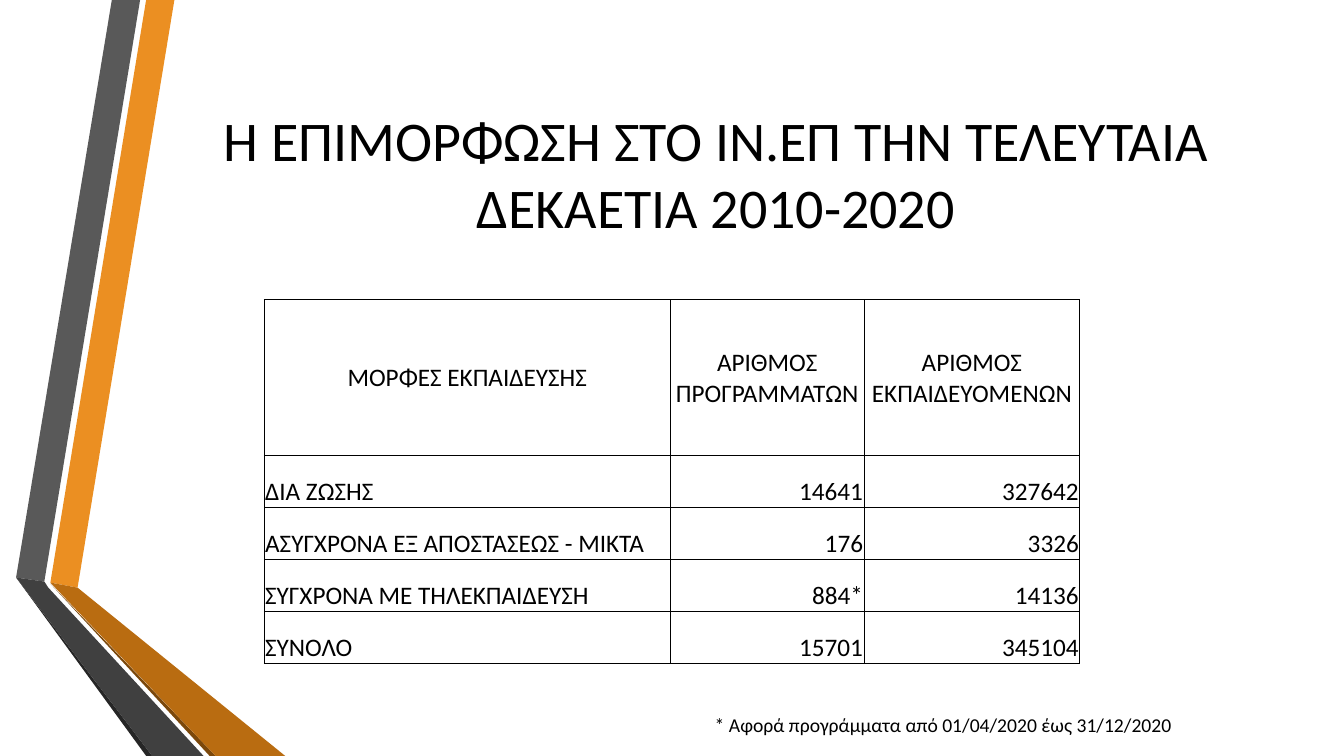
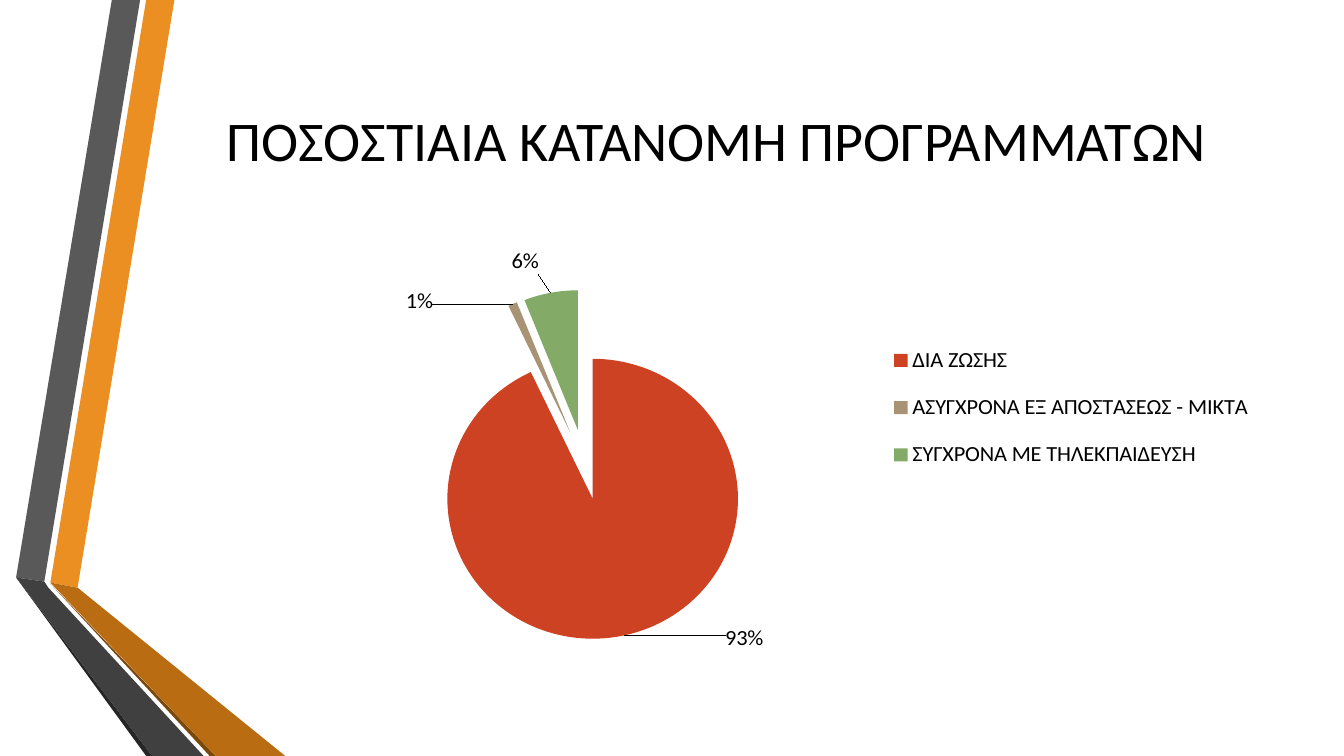
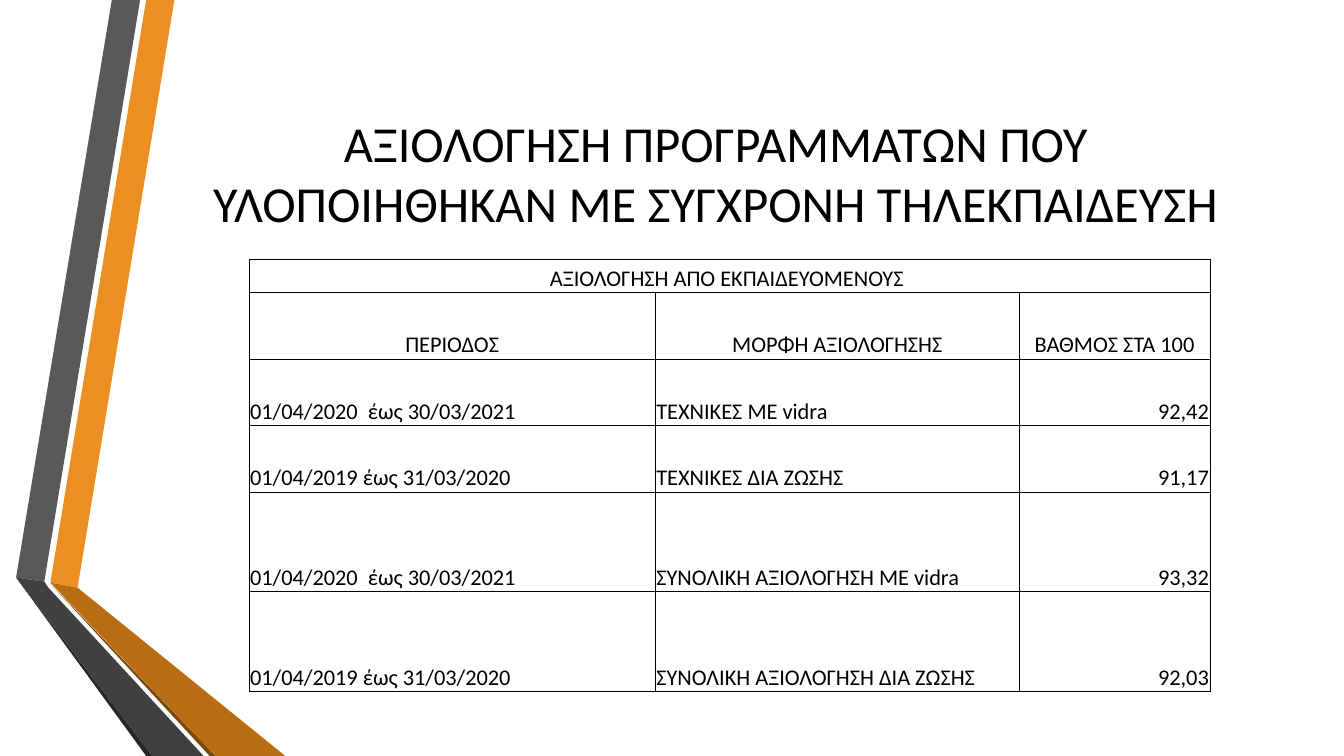
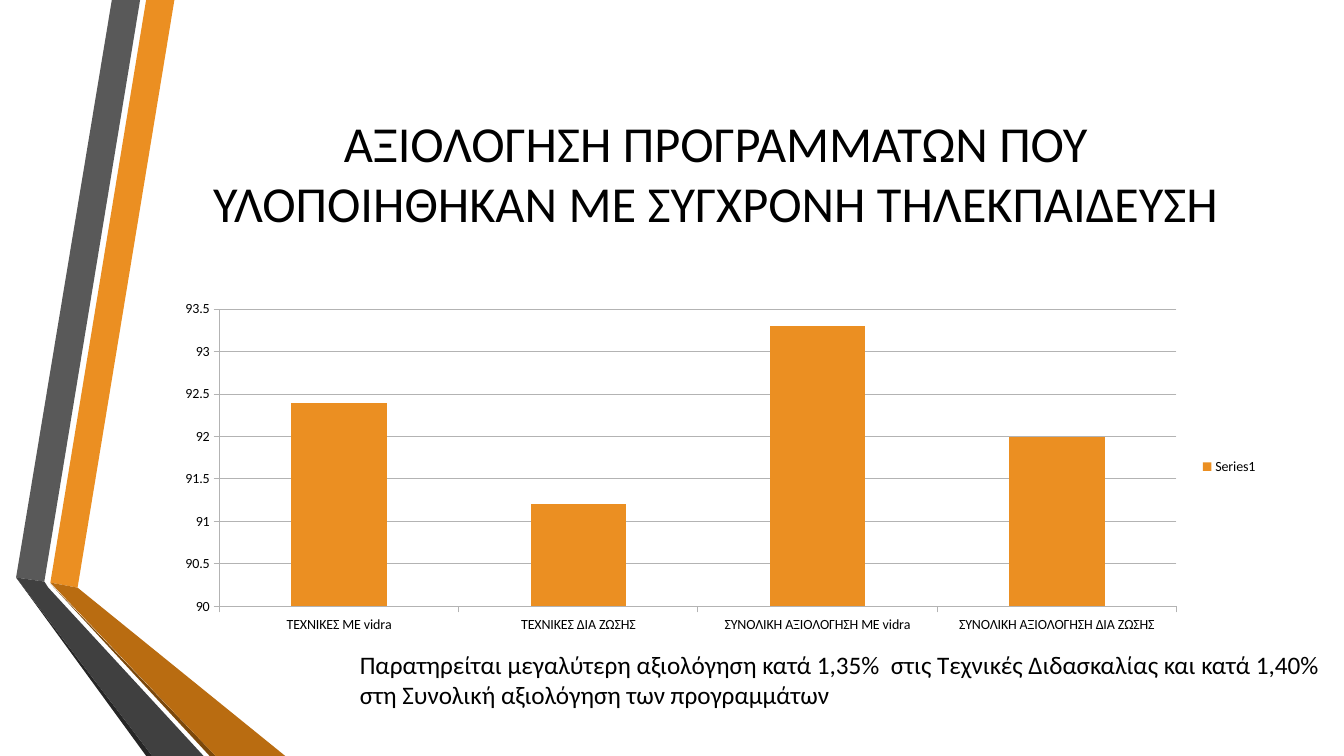
from lxml import etree
from pptx import Presentation
from pptx.chart.data import CategoryChartData
from pptx.dml.color import RGBColor
from pptx.enum.chart import XL_CHART_TYPE, XL_LABEL_POSITION, XL_LEGEND_POSITION, XL_TICK_MARK
from pptx.enum.text import MSO_ANCHOR, MSO_AUTO_SIZE, PP_ALIGN
from pptx.oxml import parse_xml
from pptx.oxml.ns import nsdecls, qn
from pptx.util import Inches, Pt

FONT = "Calibri"
BLACK = RGBColor(0x00, 0x00, 0x00)
ORANGE = RGBColor(0xEB, 0x8F, 0x22)
DARK_ORANGE = RGBColor(0xB9, 0x6C, 0x11)
BROWN = RGBColor(0x7B, 0x48, 0x0B)
GRAY = RGBColor(0x59, 0x59, 0x59)
DARK_GRAY = RGBColor(0x40, 0x40, 0x40)
CHARCOAL = RGBColor(0x26, 0x26, 0x26)
RED = RGBColor(0xCD, 0x42, 0x23)
TAN = RGBColor(0xA8, 0x93, 0x74)
GREEN = RGBColor(0x83, 0xAA, 0x67)
GRID_GRAY = RGBColor(0xB3, 0xB3, 0xB3)

BANDS = [
    (ORANGE, [(0.5, 5.78), (0.77, 5.83), (1.73, 0), (1.45, 0)]),
    (GRAY, [(1.39, 0), (1.11, 0), (0.16, 5.73), (0.44, 5.77)]),
    (CHARCOAL, [(0.16, 5.73), (1.45, 7.5), (1.51, 7.5)]),
    (BROWN, [(0.5, 5.79), (2.08, 7.5), (2.14, 7.5)]),
    (DARK_ORANGE, [(0.5, 5.78), (2.14, 7.5), (2.83, 7.5), (0.77, 5.83)]),
    (DARK_GRAY, [(2.02, 7.5), (0.48, 5.83), (0.44, 5.77), (0.16, 5.73), (1.51, 7.5)]),
]

IN_PERSON = "ΔΙΑ ΖΩΣΗΣ"
MIXED = "ΑΣΥΓΧΡΟΝΑ ΕΞ ΑΠΟΣΤΑΣΕΩΣ - ΜΙΚΤΑ"
REMOTE = "ΣΥΓΧΡΟΝΑ ΜΕ ΤΗΛΕΚΠΑΙΔΕΥΣΗ"
SHARES_TITLE = "ΠΟΣΟΣΤΙΑΙΑ ΚΑΤΑΝΟΜΗ ΠΡΟΓΡΑΜΜΑΤΩΝ"
RATING_TITLE = "ΑΞΙΟΛΟΓΗΣΗ ΠΡΟΓΡΑΜΜΑΤΩΝ ΠΟΥ ΥΛΟΠΟΙΗΘΗΚΑΝ ΜΕ ΣΥΓΧΡΟΝΗ ΤΗΛΕΚΠΑΙΔΕΥΣΗ"
THIS_YEAR = "01/04/2020  έως 30/03/2021"
LAST_YEAR = "01/04/2019 έως 31/03/2020"
RATINGS = [
    (THIS_YEAR, "ΤΕΧΝΙΚΕΣ ΜΕ vidra", "92,42"),
    (LAST_YEAR, "ΤΕΧΝΙΚΕΣ ΔΙΑ ΖΩΣΗΣ", "91,17"),
    (THIS_YEAR, "ΣΥΝΟΛΙΚΗ ΑΞΙΟΛΟΓΗΣΗ ΜΕ vidra", "93,32"),
    (LAST_YEAR, "ΣΥΝΟΛΙΚΗ ΑΞΙΟΛΟΓΗΣΗ ΔΙΑ ΖΩΣΗΣ", "92,03"),
]


def set_font(font, size):
    font.name = FONT
    font.size = Pt(size)
    font.color.rgb = BLACK


def prepare_layout(presentation):
    """Return the title-only layout with its title placed and nothing else on it."""
    layout = presentation.slide_layouts[5]
    for placeholder in list(layout.placeholders):
        if placeholder.placeholder_format.idx:
            layout.shapes.element.remove(placeholder.element)
        else:
            placeholder.left, placeholder.top = Inches(1.62), Inches(0.75)
            placeholder.width, placeholder.height = Inches(10.96), Inches(1.92)
    return layout


def add_bands(slide):
    """Draw the bands and move them to the layout, so that every slide shows them."""
    bands = []
    for color, points in BANDS:
        corners = [(Inches(x), Inches(y)) for x, y in points]
        builder = slide.shapes.build_freeform(*corners[0])
        builder.add_line_segments(corners[1:], close=True)
        band = builder.convert_to_shape()
        band.shadow.inherit = False
        band.fill.solid()
        band.fill.fore_color.rgb = color
        band.line.fill.background()
        bands.append(band)
    for band in bands:
        slide.slide_layout.shapes.element.append(band.element)


def add_slide(presentation, layout, title, size, bottom_margin=0.05):
    slide = presentation.slides.add_slide(layout)
    frame = slide.shapes.title.text_frame
    frame.text = title
    frame.auto_size = MSO_AUTO_SIZE.NONE
    frame.vertical_anchor = MSO_ANCHOR.MIDDLE
    frame.margin_bottom = Inches(bottom_margin)
    frame.paragraphs[0].alignment = PP_ALIGN.CENTER
    set_font(frame.paragraphs[0].font, size)
    return slide


def add_text(slide, text, left, top, width, height, size):
    frame = slide.shapes.add_textbox(
        Inches(left), Inches(top), Inches(width), Inches(height)).text_frame
    frame.word_wrap = True
    frame.text = text
    set_font(frame.paragraphs[0].font, size)


def set_borders(cell):
    properties = cell._tc.get_or_add_tcPr()
    for index, side in enumerate(("lnL", "lnR", "lnT", "lnB")):
        properties.insert(index, parse_xml(
            f'<a:{side} {nsdecls("a")} w="6350"><a:solidFill>'
            f'<a:srgbClr val="{BLACK}"/></a:solidFill></a:{side}>'))


def add_grid(slide, rows, left, top, widths, heights, size,
             header_rows, text_columns, header_anchor):
    """Add a ruled table: centred header, left-aligned text, right-aligned numbers."""
    table = slide.shapes.add_table(
        len(heights), len(widths), Inches(left), Inches(top),
        Inches(sum(widths)), Inches(sum(heights))).table
    table.first_row = table.horz_banding = False
    for column, width in zip(table.columns, widths):
        column.width = Inches(width)
    for row_index, (row, height, texts) in enumerate(zip(table.rows, heights, rows)):
        row.height = Inches(height)
        is_header = row_index < header_rows
        for column_index, (cell, text) in enumerate(zip(row.cells, texts)):
            cell.text = text
            cell.fill.background()
            cell.margin_left = cell.margin_right = cell.margin_top = Inches(0.01)
            cell.margin_bottom = 0
            cell.vertical_anchor = header_anchor if is_header else MSO_ANCHOR.BOTTOM
            paragraph = cell.text_frame.paragraphs[0]
            if is_header:
                paragraph.alignment = PP_ALIGN.CENTER
            elif column_index >= text_columns:
                paragraph.alignment = PP_ALIGN.RIGHT
            else:
                paragraph.alignment = PP_ALIGN.LEFT
            set_font(paragraph.font, size)
            set_borders(cell)
    return table


def add_chart(slide, kind, series_name, categories, values, left, top, width, height,
              number_format="General"):
    data = CategoryChartData(number_format=number_format)
    data.categories = categories
    data.add_series(series_name, values)
    chart = slide.shapes.add_chart(
        kind, Inches(left), Inches(top), Inches(width), Inches(height), data).chart
    set_font(chart.font, 10)
    chart.has_title = False
    chart.has_legend = True
    chart.legend.position = XL_LEGEND_POSITION.RIGHT
    chart.legend.include_in_layout = False
    return chart


def manual_layout(**values):
    """Return a c:layout element with its settings in the given order."""
    layout = etree.Element(qn("c:layout"))
    manual = etree.SubElement(layout, qn("c:manualLayout"))
    for name, value in values.items():
        etree.SubElement(manual, qn(f"c:{name}"), val=str(value))
    return layout


def replace_layout(parent, previous, layout):
    for old in parent.findall(qn("c:layout")):
        parent.remove(old)
    if previous is None:
        parent.insert(0, layout)
    else:
        previous.addnext(layout)


def add_shares_pie(slide):
    chart = add_chart(
        slide, XL_CHART_TYPE.PIE, "Series 1", [SHARES_TITLE, IN_PERSON, MIXED, REMOTE],
        [None, 0.93, 0.01, 0.06], 1.69, 2.43, 10.96, 4.19, "0%")
    plot = chart.plots[0]
    plot.vary_by_categories = True
    series = plot.series[0]
    explosion = etree.Element(qn("c:explosion"), val="25")
    series._element.find(qn("c:tx")).addnext(explosion)
    for index, color in enumerate((ORANGE, RED, TAN, GREEN)):
        fill = series.points[index].format.fill
        fill.solid()
        fill.fore_color.rgb = color

    labels = series.data_labels
    labels.show_value = True
    labels.number_format = "0%"
    labels.number_format_is_linked = False
    set_font(labels.font, 16)
    for index in (1, 2, 3):
        label = series.points[index].data_label
        set_font(label.font, 16)
        label.position = XL_LABEL_POSITION.OUTSIDE_END
    label_offsets = [(0.09, -0.03), (-0.07, 0.04), (-0.01, -0.03)]
    for label, (x, y) in zip(chart.element.iter(qn("c:dLbl")), label_offsets):
        replace_layout(label, label.find(qn("c:idx")), manual_layout(x=x, y=y))
    labels_element = series._element.find(qn("c:dLbls"))
    for old in labels_element.findall(qn("c:showLeaderLines")):
        labels_element.remove(old)
    etree.SubElement(labels_element, qn("c:showLeaderLines"), val="1")

    plot_area = chart.element.find(".//" + qn("c:plotArea"))
    replace_layout(plot_area, None, manual_layout(
        layoutTarget="inner", xMode="edge", yMode="edge", x=0.07, y=0.11, w=0.61, h=0.86))

    set_font(chart.legend.font, 16)
    legend_position = chart.element.find(".//" + qn("c:legendPos"))
    replace_layout(legend_position.getparent(), legend_position, manual_layout(
        xMode="edge", yMode="edge", x=0.65, y=0.2, w=0.33, h=0.4))
    legend_position.addnext(parse_xml(
        f'<c:legendEntry {nsdecls("c")}><c:idx val="0"/><c:delete val="1"/></c:legendEntry>'))


def add_ratings_columns(slide):
    chart = add_chart(
        slide, XL_CHART_TYPE.COLUMN_CLUSTERED, "Series1", [form for _, form, _ in RATINGS],
        [92.4, 91.2, 93.3, 92], 1.62, 2.92, 10.96, 3.42)
    plot = chart.plots[0]
    plot.gap_width = 150
    plot.vary_by_categories = False
    fill = plot.series[0].format.fill
    fill.solid()
    fill.fore_color.rgb = ORANGE
    value_axis = chart.value_axis
    value_axis.minimum_scale, value_axis.maximum_scale = 90, 93.5
    value_axis.major_unit = 0.5
    value_axis.has_major_gridlines = True
    for axis in (value_axis, chart.category_axis):
        axis.major_tick_mark = XL_TICK_MARK.OUTSIDE
        set_font(axis.tick_labels.font, 10)
    for ruled in (value_axis, chart.category_axis, value_axis.major_gridlines):
        ruled.format.line.color.rgb = GRID_GRAY
        ruled.format.line.width = Pt(0)


def main():
    presentation = Presentation()
    presentation.slide_width, presentation.slide_height = Inches(13.33), Inches(7.5)
    layout = prepare_layout(presentation)

    slide = add_slide(presentation, layout,
                      "Η ΕΠΙΜΟΡΦΩΣΗ ΣΤΟ ΙΝ.ΕΠ ΤΗΝ ΤΕΛΕΥΤΑΙΑ ΔΕΚΑΕΤΙΑ 2010-2020", 40)
    add_bands(slide)
    programmes = [
        ("ΜΟΡΦΕΣ ΕΚΠΑΙΔΕΥΣΗΣ", "ΑΡΙΘΜΟΣ ΠΡΟΓΡΑΜΜΑΤΩΝ", "ΑΡΙΘΜΟΣ ΕΚΠΑΙΔΕΥΟΜΕΝΩΝ"),
        (IN_PERSON, "14641", "327642"),
        (MIXED, "176", "3326"),
        (REMOTE, "884*", "14136"),
        ("ΣΥΝΟΛΟ", "15701", "345104"),
    ]
    header_height = 1.55
    row_height = (3.61 - header_height) / 4
    add_grid(slide, programmes, 2.62, 2.97, [4.03, 1.92, 2.14],
             [header_height] + [row_height] * 4, 18,
             header_rows=1, text_columns=1, header_anchor=MSO_ANCHOR.MIDDLE)
    add_text(slide, "* Αφορά προγράμματα από 01/04/2020 έως 31/12/2020",
             6.99, 7.02, 5.91, 0.34, 14)

    slide = add_slide(presentation, layout, SHARES_TITLE, 40, bottom_margin=0.72)
    add_shares_pie(slide)

    slide = add_slide(presentation, layout, RATING_TITLE, 36)
    ratings = [
        ("ΑΞΙΟΛΟΓΗΣΗ ΑΠΟ ΕΚΠΑΙΔΕΥΟΜΕΝΟΥΣ ", "", ""),
        ("ΠΕΡΙΟΔΟΣ", "ΜΟΡΦΗ ΑΞΙΟΛΟΓΗΣΗΣ", "ΒΑΘΜΟΣ ΣΤΑ 100"),
        *RATINGS,
    ]
    table = add_grid(slide, ratings, 2.47, 2.57, [4.03, 3.61, 1.89],
                     [0.33] + [0.66] * 3 + [0.99] * 2, 16,
                     header_rows=2, text_columns=2, header_anchor=MSO_ANCHOR.BOTTOM)
    table.cell(0, 0).merge(table.cell(0, 2))

    slide = add_slide(presentation, layout, RATING_TITLE, 36)
    add_ratings_columns(slide)
    add_text(slide, "Παρατηρείται μεγαλύτερη αξιολόγηση κατά 1,35%  στις Τεχνικές Διδασκαλίας "
             "και κατά 1,40% στη Συνολική αξιολόγηση των προγραμμάτων",
             3.47, 6.39, 9.72, 0.71, 18)

    presentation.save("out.pptx")


if __name__ == "__main__":
    main()
